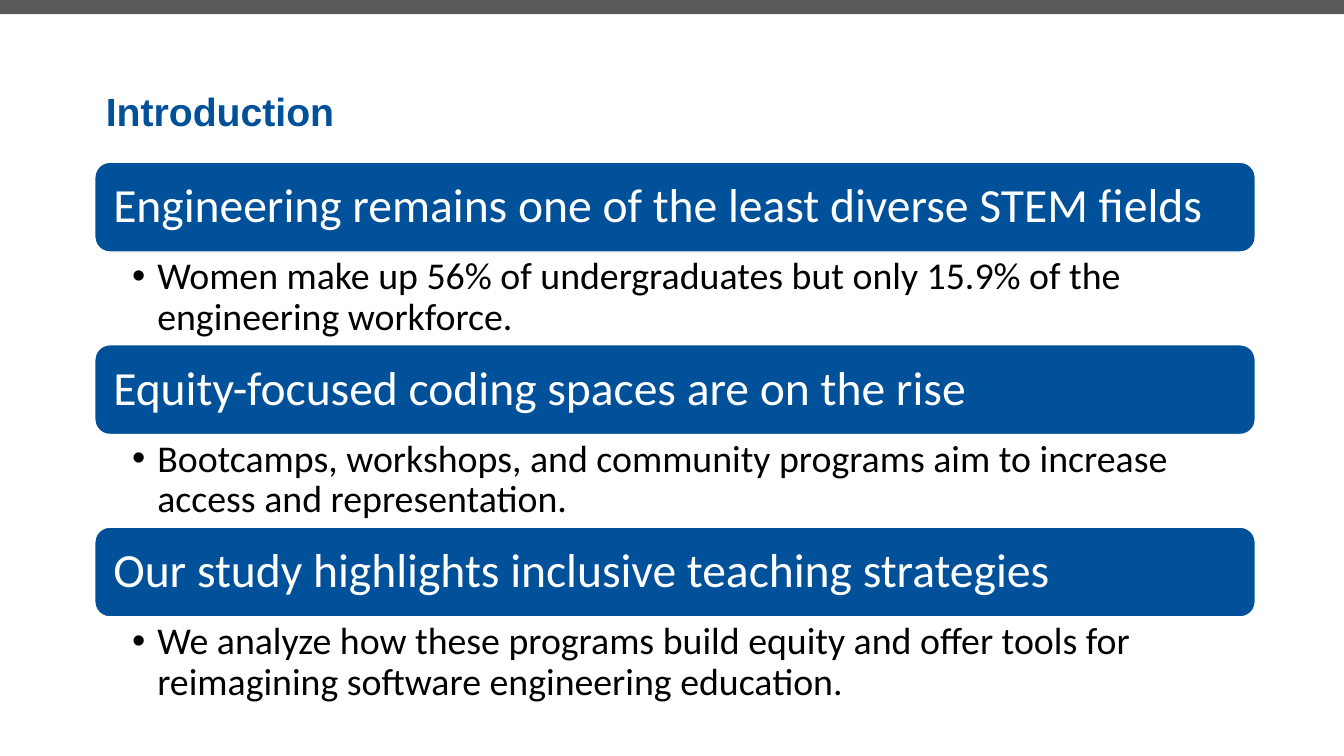
from lxml.etree import SubElement
from pptx import Presentation
from pptx.dml.color import RGBColor
from pptx.enum.shapes import MSO_SHAPE
from pptx.enum.text import MSO_ANCHOR, MSO_AUTO_SIZE, PP_ALIGN
from pptx.oxml.ns import qn
from pptx.util import Inches, Pt

BLUE, GRAY, WHITE, BLACK = "00509A", "595959", "FFFFFF", "000000"
PAGE_WIDTH, PAGE_HEIGHT = 13.33, 7.5
HEADING_HEIGHT, DETAIL_HEIGHT = 0.89, 0.92

POINTS = [
    ("Engineering remains one of the least diverse STEM fields",
     "Women make up 56% of undergraduates but only 15.9% of the engineering workforce."),
    ("Equity-focused coding spaces are on the rise",
     "Bootcamps, workshops, and community programs aim to increase access and representation."),
    ("Our study highlights inclusive teaching strategies",
     "We analyze how these programs build equity and offer tools for reimagining "
     "software engineering education."),
]


def color(value):
    return RGBColor.from_string(value)


def write(frame, text, size, font_color, name="Calibri", bold=False):
    paragraph = frame.paragraphs[0]
    paragraph.text = text
    paragraph.alignment = PP_ALIGN.LEFT
    paragraph.line_spacing = 0.9
    font = paragraph.font
    font.name, font.size, font.bold = name, Pt(size), bold
    font.color.rgb = color(font_color)


def set_margins(frame, left, top, right, bottom):
    frame.margin_left, frame.margin_top = Inches(left), Inches(top)
    frame.margin_right, frame.margin_bottom = Inches(right), Inches(bottom)


def add_block(page, kind, left, top, width, height, fill):
    block = page.shapes.add_shape(
        kind, Inches(left), Inches(top), Inches(width), Inches(height))
    block.shadow.inherit = False
    block.fill.solid()
    block.fill.fore_color.rgb = color(fill)
    block.line.fill.background()
    return block


def add_title(page, text, left, top, width, height):
    title = page.shapes.title
    title.left, title.top = Inches(left), Inches(top)
    title.width, title.height = Inches(width), Inches(height)
    frame = title.text_frame
    frame.auto_size = MSO_AUTO_SIZE.NONE
    frame.vertical_anchor = MSO_ANCHOR.TOP
    set_margins(frame, 0.1, 0.05, 0.1, 0.05)
    write(frame, text, 28, BLUE, "Arial", True)
    frame.paragraphs[0].line_spacing = 1.0


def add_heading(page, text, left, top, width, height):
    heading = add_block(page, MSO_SHAPE.ROUNDED_RECTANGLE, left, top, width, height, BLUE)
    heading.line.color.rgb = color(WHITE)
    heading.line.width = Pt(1)
    frame = heading.text_frame
    frame.word_wrap = True
    frame.vertical_anchor = MSO_ANCHOR.MIDDLE
    set_margins(frame, 0.14, 0.14, 0.14, 0.14)
    write(frame, text, 34, WHITE)


def add_detail(page, text, left, top, width, height):
    detail = page.shapes.add_textbox(
        Inches(left), Inches(top), Inches(width), Inches(height))
    frame = detail.text_frame
    frame.word_wrap = True
    set_margins(frame, 0.37, 0.05, 0.26, 0.05)
    properties = frame.paragraphs[0]._p.get_or_add_pPr()
    properties.set("marL", str(Inches(0.25)))
    properties.set("indent", str(Inches(-0.25)))
    SubElement(properties, qn("a:buFont"), typeface="Arial")
    SubElement(properties, qn("a:buChar"), char="•")
    write(frame, text, 27, BLACK)


def add_points(page, points, left, top, width):
    """Stack each heading directly above its bulleted detail."""
    for index, (heading, detail) in enumerate(points):
        row_top = top + index * (HEADING_HEIGHT + DETAIL_HEIGHT)
        add_heading(page, heading, left, row_top, width, HEADING_HEIGHT)
        add_detail(page, detail, left, row_top + HEADING_HEIGHT, width, DETAIL_HEIGHT)


def main():
    deck = Presentation()
    deck.slide_width, deck.slide_height = Inches(PAGE_WIDTH), Inches(PAGE_HEIGHT)
    page = deck.slides.add_slide(deck.slide_layouts.get_by_name("Title Only"))
    add_block(page, MSO_SHAPE.RECTANGLE, 0, 0, PAGE_WIDTH, 0.14, GRAY)
    add_title(page, "Introduction", 0.95, 0.82, 9.64, 0.57)
    add_points(page, POINTS, 0.94, 1.61, 11.51)
    deck.save("out.pptx")


if __name__ == "__main__":
    main()
